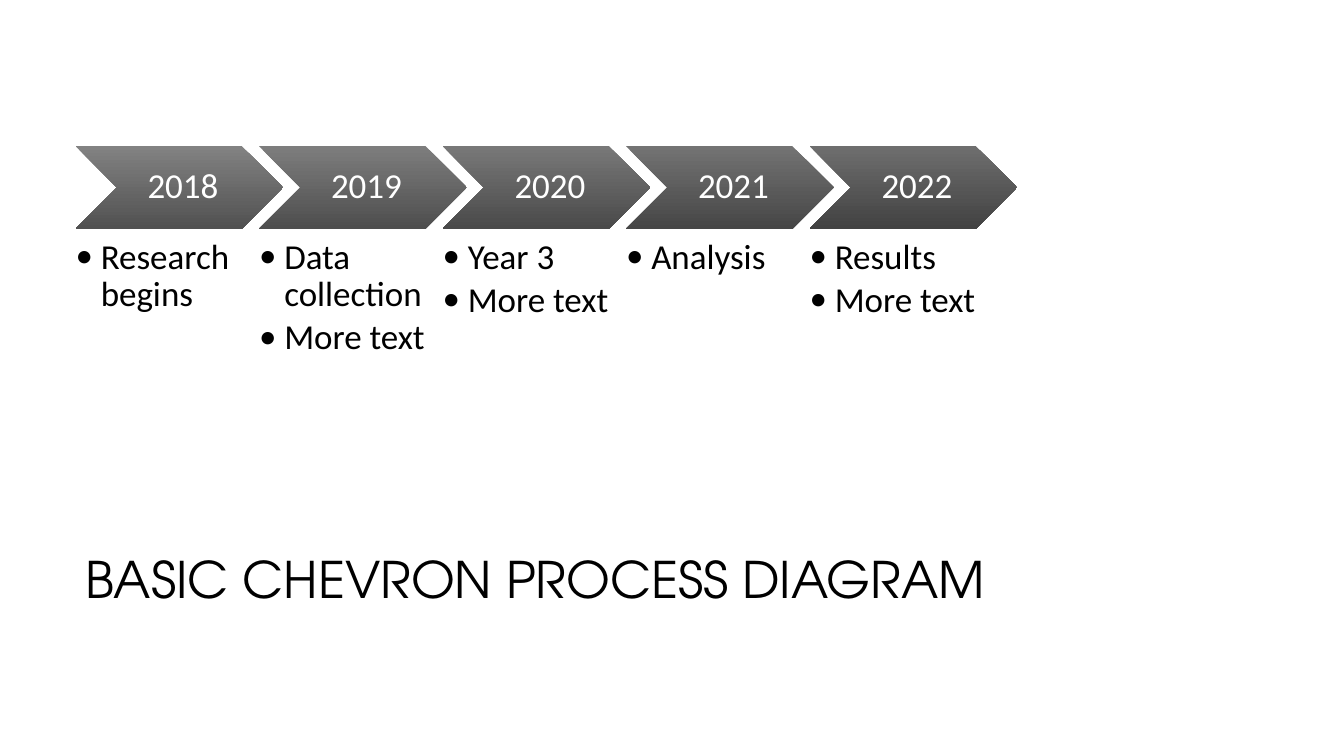
from dataclasses import dataclass

from lxml.etree import SubElement
from pptx import Presentation
from pptx.dml.color import RGBColor
from pptx.enum.shapes import MSO_SHAPE
from pptx.enum.text import MSO_ANCHOR, PP_ALIGN
from pptx.oxml.ns import qn
from pptx.util import Inches, Pt


@dataclass(frozen=True)
class Theme:
    title_font: str = "TeX Gyre Adventor"
    body_font: str = "Calibri"
    title_size: int = 36
    body_size: int = 25
    dark: str = "000000"
    light: str = "FFFFFF"


THEME = Theme()
LEFT = 0.75
STEP = 1.82
STAGES = [
    ("2018", ("828282", "515151"), ["Research begins"]),
    ("2019", ("7D7D7D", "4E4E4E"), ["Data collection", "More text"]),
    ("2020", ("787878", "4A4A4A"), ["Year 3", "More text"]),
    ("2021", ("737373", "464646"), ["Analysis"]),
    ("2022", ("6E6E6E", "424242"), ["Results", "More text"]),
]


def style_paragraph(para, font, size, color):
    para.font.name = font
    para.font.size = Pt(size)
    para.font.color.rgb = RGBColor.from_string(color)


def set_margins(frame, left, top, right, bottom):
    frame.margin_left, frame.margin_top = Inches(left), Inches(top)
    frame.margin_right, frame.margin_bottom = Inches(right), Inches(bottom)


def add_text_box(page, left, top, width, height):
    box = page.shapes.add_textbox(Inches(left), Inches(top), Inches(width), Inches(height))
    box.text_frame.word_wrap = True
    return box.text_frame


def add_title(page, text):
    frame = add_text_box(page, LEFT, 4.91, 9.33, 1.65)
    frame.vertical_anchor = MSO_ANCHOR.MIDDLE
    para = frame.paragraphs[0]
    para.text = text
    style_paragraph(para, THEME.title_font, THEME.title_size, THEME.dark)


def add_chevron(page, left, year, shades):
    chevron = page.shapes.add_shape(
        MSO_SHAPE.CHEVRON, Inches(left), Inches(1.45), Inches(2.06), Inches(0.82)
    )
    chevron.shadow.inherit = False
    chevron.line.fill.background()
    chevron.fill.gradient()
    chevron.fill.gradient_angle = 270
    for stop, shade in zip(chevron.fill.gradient_stops, shades):
        stop.color.rgb = RGBColor.from_string(shade)
    frame = chevron.text_frame
    frame.vertical_anchor = MSO_ANCHOR.MIDDLE
    set_margins(frame, 0.11, 0.04, 0.04, 0.04)
    para = frame.paragraphs[0]
    para.text = year
    para.alignment = PP_ALIGN.CENTER
    para.line_spacing = 0.9
    style_paragraph(para, THEME.body_font, THEME.body_size, THEME.light)


def add_bullet(para):
    properties = para._p.get_or_add_pPr()
    properties.set("marL", str(Inches(0.25)))
    properties.set("indent", str(Inches(-0.25)))
    SubElement(properties, qn("a:buFont"), typeface=THEME.body_font)
    SubElement(properties, qn("a:buChar"), char="•")


def add_bullet_list(page, left, items):
    frame = add_text_box(page, left, 2.37, 1.67, 1.63)
    set_margins(frame, 0, 0, 0, 0)
    frame.text = "\n".join(items)
    for para in frame.paragraphs:
        para.line_spacing = 0.9
        para.space_after = Pt(3.75)
        add_bullet(para)
        style_paragraph(para, THEME.body_font, THEME.body_size, THEME.dark)


def main():
    deck = Presentation()
    deck.slide_width, deck.slide_height = Inches(13.33), Inches(7.5)
    page = deck.slides.add_slide(deck.slide_layouts[6])
    add_title(page, "BASIC CHEVRON PROCESS DIAGRAM")
    for index, (year, shades, items) in enumerate(STAGES):
        left = LEFT + index * STEP
        add_chevron(page, left, year, shades)
        add_bullet_list(page, left, items)
    deck.save("out.pptx")


if __name__ == "__main__":
    main()
